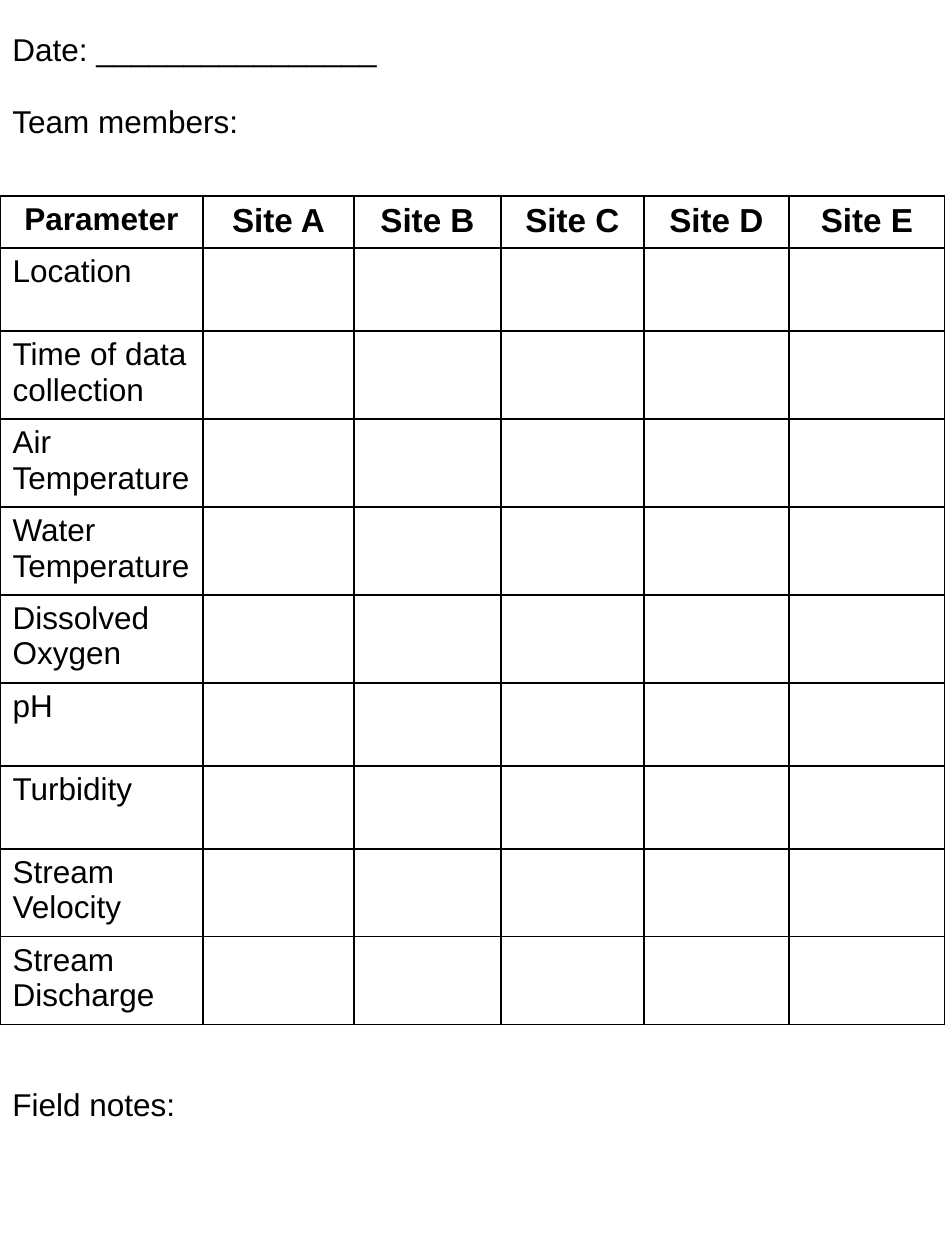
"""Build a stream survey sheet with a table of five sites."""
from lxml.etree import fromstring
from pptx import Presentation
from pptx.dml.color import RGBColor as Rgb
from pptx.enum.text import MSO_AUTO_SIZE as Fit, PP_ALIGN as Align
from pptx.util import Pt

NOTES = [
    ("Date: ________________", 24, 393),
    ("Team members:", 96, 253),
    ("Field notes:", 1079, 190),
]
HEADS = ["Parameter"] + [f"Site {x}" for x in "ABCDE"]
ROWS = [
    "Location", "Time of data collection", "Air Temperature",
    "Water Temperature", "Dissolved Oxygen", "pH", "Turbidity",
    "Stream Velocity", "Stream Discharge",
]
COLS = [203, 151, 147, 143, 145, 156]
TOP, HEAD, SHORT, TALL = 196, 52, 83, 88
WIDE, HIGH, NOTE = 945, 1260, 50
THEME = {"font": "Arial", "ink": "000000", "text": 18, "site": 19, "line": 1}
NS = "http://schemas.openxmlformats.org/drawingml/2006/main"


def px(n):
    return round(n * 914400 / 126)


def write(frame, text, size=THEME["text"], bold=False, align=Align.LEFT):
    para = frame.paragraphs[0]
    para.alignment = align
    run = para.add_run()
    run.text = text
    look = {"name": THEME["font"], "size": Pt(size), "bold": bold}
    for key, val in look.items():
        setattr(run.font, key, val)
    run.font.color.rgb = Rgb.from_string(THEME["ink"])


def edge(cell):
    cell.fill.background()
    props = cell._tc.get_or_add_tcPr()
    for i, side in enumerate("LRTB"):
        props.insert(i, fromstring(
            f'<a:ln{side} xmlns:a="{NS}" w="{Pt(THEME["line"])}"><a:solidFill>'
            f'<a:srgbClr val="{THEME["ink"]}"/></a:solidFill></a:ln{side}>'))


def add_note(slide, text, top, wide):
    box = slide.shapes.add_textbox(0, px(top), px(wide), px(NOTE))
    frame = box.text_frame
    for key, val in {"word_wrap": False, "auto_size": Fit.SHAPE_TO_FIT_TEXT}.items():
        setattr(frame, key, val)
    write(frame, text)


def add_grid(slide):
    highs = [HEAD] + [TALL if " " in name else SHORT for name in ROWS]
    grid = slide.shapes.add_table(
        len(highs), len(COLS), 0, px(TOP), px(sum(COLS)), px(sum(highs))).table
    for key in ("first_row", "horz_banding"):
        setattr(grid, key, False)
    for col, wide in zip(grid.columns, COLS):
        col.width = px(wide)
    for row, high in zip(grid.rows, highs):
        row.height = px(high)
    for cell in grid.iter_cells():
        edge(cell)
    for i, head in enumerate(HEADS):
        size = THEME["site" if i else "text"]
        write(grid.cell(0, i).text_frame, head, size, True, Align.CENTER)
    for i, name in enumerate(ROWS, 1):
        write(grid.cell(i, 0).text_frame, name)


def main():
    deck = Presentation()
    deck.slide_width, deck.slide_height = px(WIDE), px(HIGH)
    slide = deck.slides.add_slide(deck.slide_layouts[6])
    add_grid(slide)
    for note in NOTES:
        add_note(slide, *note)
    deck.save("out.pptx")


if __name__ == "__main__":
    main()
